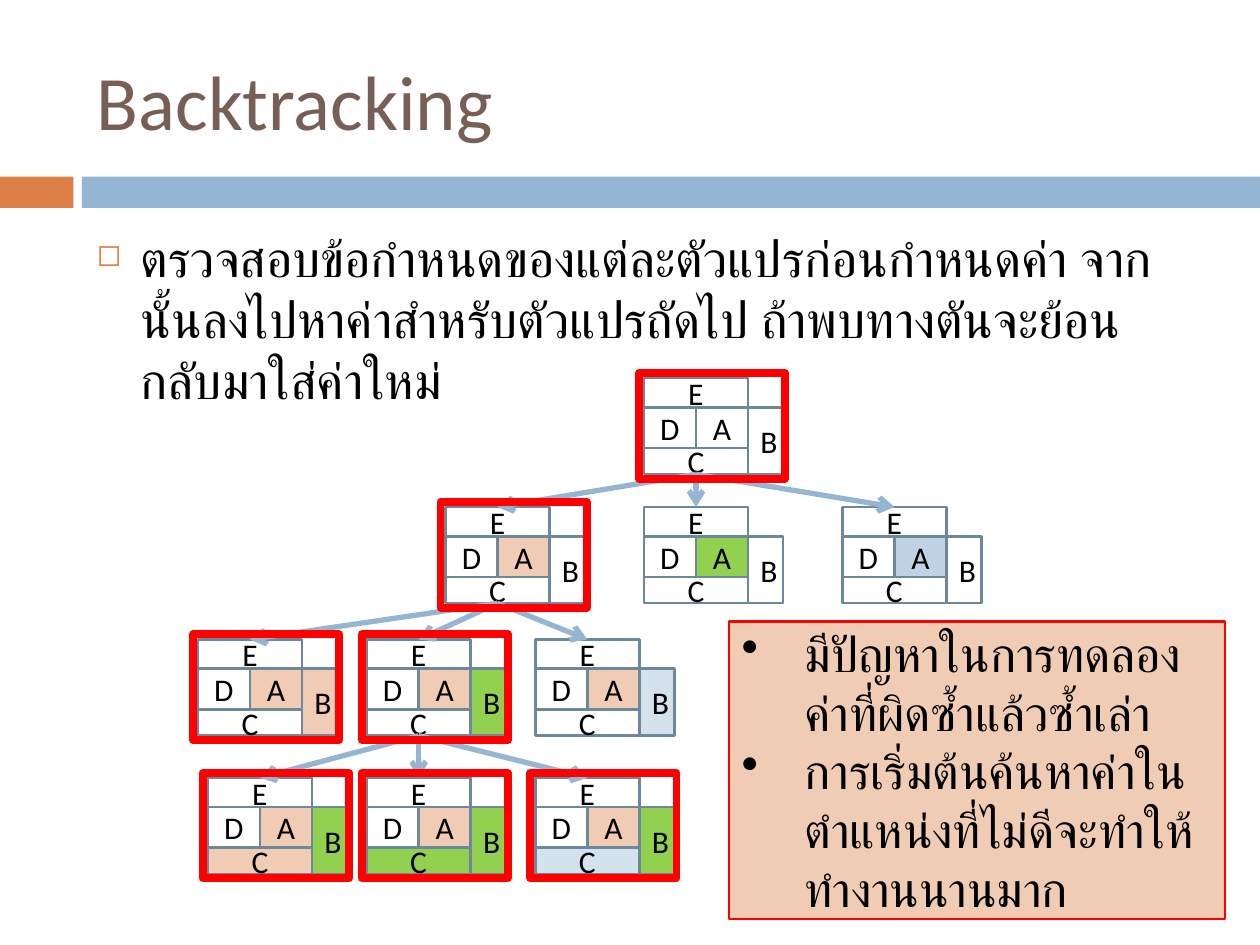
from dataclasses import dataclass, field

from lxml.etree import SubElement
from pptx import Presentation
from pptx.dml.color import RGBColor
from pptx.enum.shapes import MSO_CONNECTOR, MSO_SHAPE
from pptx.enum.text import MSO_ANCHOR, MSO_AUTO_SIZE, PP_ALIGN
from pptx.oxml.ns import qn
from pptx.util import Cm, Pt


@dataclass(frozen=True)
class Theme:
    font: str = "Calibri"
    title_size: float = 44
    body_size: float = 29
    note_size: float = 28
    region_size: float = 18
    title: str = "775F55"
    text: str = "000000"
    white: str = "FFFFFF"
    orange: str = "DD8047"
    blue: str = "94B6D2"
    outline: str = "6D879B"
    frame: str = "FF0000"
    peach: str = "F1CCB5"
    green: str = "92D050"
    sky: str = "BFD3E4"
    pale: str = "D4E2ED"


@dataclass(frozen=True)
class Box:
    left: float
    top: float
    width: float
    height: float

    def lengths(self) -> tuple:
        return Cm(self.left), Cm(self.top), Cm(self.width), Cm(self.height)


@dataclass(frozen=True)
class MapNode:
    left: float
    top: float
    fills: dict = field(default_factory=dict)
    framed: bool = False


THEME = Theme()
MAP_WIDTH, MAP_HEIGHT = 2.1, 1.94
REGIONS = {
    "E": Box(0, 0, MAP_WIDTH, 0.59),
    "D": Box(0, 0.59, 1.05, 0.82),
    "C": Box(0, 1.41, MAP_WIDTH, 0.53),
    "B": Box(MAP_WIDTH, 0.59, 0.71, 1.35),
    "A": Box(1.05, 0.59, 1.05, 0.82),
}
LEFTS = (3.99, 7.39, 10.79)
PEACH_A = {"A": THEME.peach}
GREEN_B = PEACH_A | {"B": THEME.green}

ROOT = MapNode(12.98, 7.62, framed=True)
FIRST_LEVEL = [
    MapNode(8.98, 10.22, PEACH_A, True),
    MapNode(12.98, 10.22, {"A": THEME.green}),
    MapNode(16.98, 10.22, {"A": THEME.sky}),
]
SECOND_LEVEL = [
    MapNode(LEFTS[0], 12.89, PEACH_A | {"B": THEME.peach}, True),
    MapNode(LEFTS[1], 12.89, GREEN_B, True),
    MapNode(LEFTS[2], 12.89, PEACH_A | {"B": THEME.pale}),
]
THIRD_LEVEL = [
    MapNode(LEFTS[0] + 0.2, 15.68, GREEN_B | {"C": THEME.peach}, True),
    MapNode(LEFTS[1], 15.68, GREEN_B | {"C": THEME.green}, True),
    MapNode(LEFTS[2], 15.68, GREEN_B | {"C": THEME.pale}, True),
]
BRANCHES = [
    (ROOT, FIRST_LEVEL),
    (FIRST_LEVEL[0], SECOND_LEVEL),
    (SECOND_LEVEL[1], THIRD_LEVEL),
]


def set_font(paragraph, size: float, color: str = THEME.text) -> None:
    paragraph.font.name = THEME.font
    paragraph.font.size = Pt(size)
    paragraph.font.color.rgb = RGBColor.from_string(color)


def add_bullet(paragraph, character: str, indent: float,
               color: str = THEME.text, percent: int = 100) -> None:
    properties = paragraph._p.get_or_add_pPr()
    properties.set("marL", str(Cm(indent)))
    properties.set("indent", str(-Cm(indent)))
    bullet_color = SubElement(properties, qn("a:buClr"))
    SubElement(bullet_color, qn("a:srgbClr"), val=color)
    SubElement(properties, qn("a:buSzPct"), val=str(percent * 1000))
    SubElement(properties, qn("a:buChar"), char=character)


def add_rectangle(slide, box: Box, fill: str | None,
                  line: str | None = None, weight: float = 1.5):
    shape = slide.shapes.add_shape(MSO_SHAPE.RECTANGLE, *box.lengths())
    shape.shadow.inherit = False
    if fill:
        shape.fill.solid()
        shape.fill.fore_color.rgb = RGBColor.from_string(fill)
    else:
        shape.fill.background()
    if line:
        shape.line.color.rgb = RGBColor.from_string(line)
        shape.line.width = Pt(weight)
    else:
        shape.line.fill.background()
    return shape


def add_map(slide, node: MapNode) -> None:
    for name, region in REGIONS.items():
        box = Box(node.left + region.left, node.top + region.top, region.width, region.height)
        shape = add_rectangle(slide, box, node.fills.get(name, THEME.white), THEME.outline)
        paragraph = shape.text_frame.paragraphs[0]
        paragraph.text = name
        paragraph.alignment = PP_ALIGN.CENTER
        set_font(paragraph, THEME.region_size)


def add_arrow(slide, parent: MapNode, child: MapNode) -> None:
    connector = slide.shapes.add_connector(
        MSO_CONNECTOR.STRAIGHT,
        Cm(parent.left + MAP_WIDTH / 2), Cm(parent.top + MAP_HEIGHT),
        Cm(child.left + MAP_WIDTH / 2), Cm(child.top))
    connector.line.color.rgb = RGBColor.from_string(THEME.blue)
    connector.line.width = Pt(3)
    SubElement(connector.line._get_or_add_ln(), qn("a:tailEnd"), type="arrow")
    SubElement(connector._element.spPr, qn("a:effectLst"))


def add_title(slide, text: str) -> None:
    title = slide.shapes.title
    title.left, title.top, title.width, title.height = Box(1.7, 0.64, 22.66, 2.74).lengths()
    title.text_frame.text = text
    title.text_frame.auto_size = MSO_AUTO_SIZE.NONE
    title.text_frame.vertical_anchor = MSO_ANCHOR.MIDDLE
    paragraph = title.text_frame.paragraphs[0]
    paragraph.alignment = PP_ALIGN.LEFT
    set_font(paragraph, THEME.title_size, THEME.title)


def add_body(slide, text: str) -> None:
    body = slide.shapes.add_textbox(*Box(1.7, 4.45, 22.66, 12.5).lengths())
    body.text_frame.word_wrap = True
    paragraph = body.text_frame.paragraphs[0]
    paragraph.text = text
    add_bullet(paragraph, "◻", 0.89, THEME.orange, 60)
    paragraph.space_before = Pt(7)
    set_font(paragraph, THEME.body_size)


def add_note(slide, lines: list[str]) -> None:
    note = add_rectangle(slide, Box(14.7, 12.53, 10, 6), THEME.peach, THEME.frame)
    note.text_frame.text = "\n".join(lines)
    for paragraph in note.text_frame.paragraphs:
        paragraph.alignment = PP_ALIGN.LEFT
        add_bullet(paragraph, "•", 1.27)
        set_font(paragraph, THEME.note_size)


def main() -> None:
    presentation = Presentation()
    presentation.slide_width, presentation.slide_height = Cm(25.4), Cm(19.05)
    slide = presentation.slides.add_slide(presentation.slide_layouts[5])

    add_rectangle(slide, Box(0, 3.56, 1.48, 0.63), THEME.orange)
    add_rectangle(slide, Box(1.65, 3.56, 23.75, 0.63), THEME.blue)
    add_title(slide, "Backtracking")
    add_body(slide, "ตรวจสอบข้อกำหนดของแต่ละตัวแปรก่อนกำหนดค่า จากนั้นลงไปหาค่าสำหรับตัวแปรถัดไป ถ้าพบทางตันจะย้อนกลับมาใส่ค่าใหม่")

    nodes = [ROOT, *FIRST_LEVEL, *SECOND_LEVEL, *THIRD_LEVEL]
    for node in nodes:
        add_map(slide, node)
    for parent, children in BRANCHES:
        for child in children:
            add_arrow(slide, parent, child)
    for node in nodes:
        if node.framed:
            add_rectangle(slide, Box(node.left - 0.1, node.top - 0.1, 2.95, 2.13),
                          None, THEME.frame, 4.5)

    add_note(slide, [
        "มีปัญหาในการทดลองค่าที่ผิดซ้ำแล้วซ้ำเล่า",
        "การเริ่มต้นค้นหาค่าในตำแหน่งที่ไม่ดีจะทำให้ทำงานนานมาก",
    ])
    presentation.save("out.pptx")


if __name__ == "__main__":
    main()
